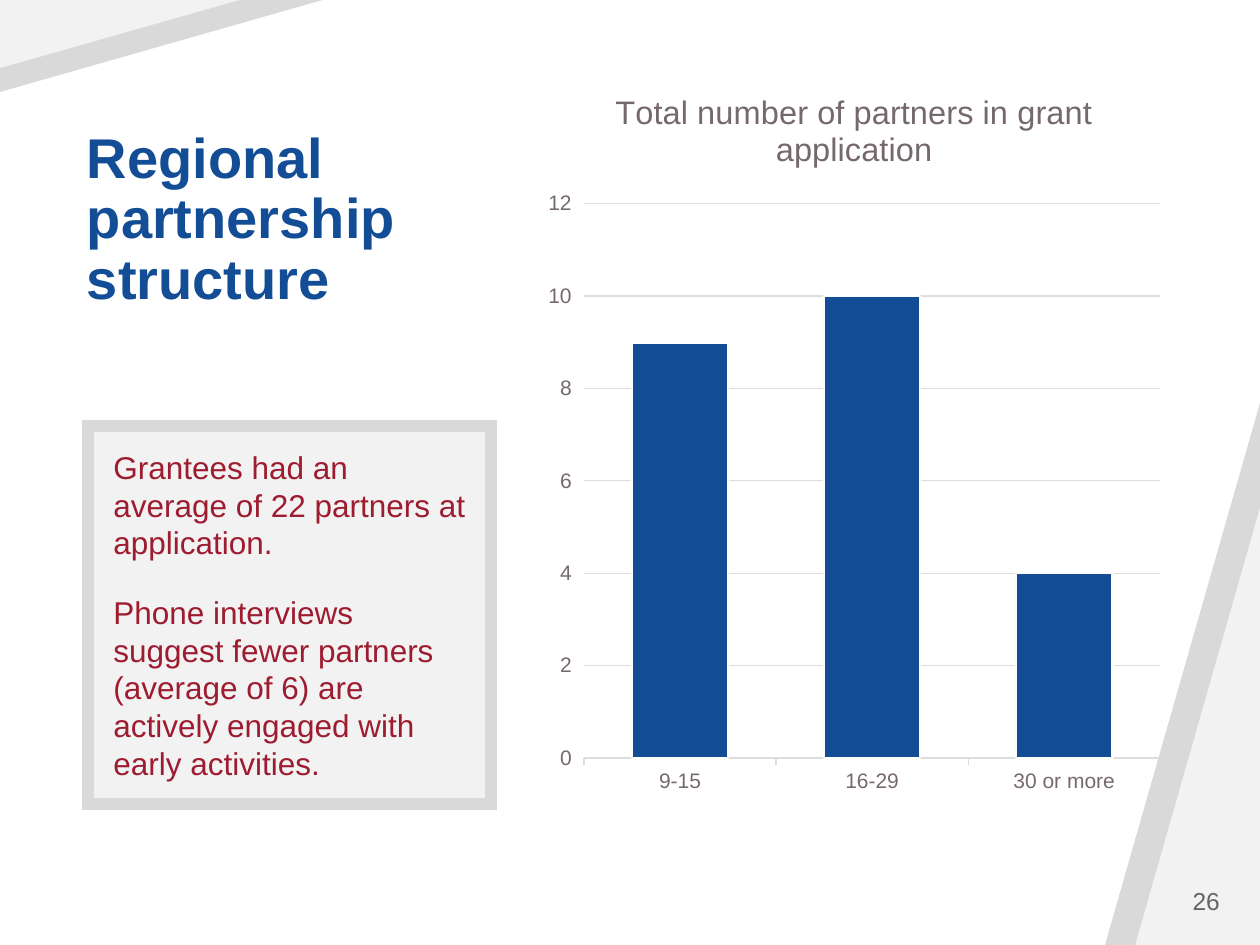
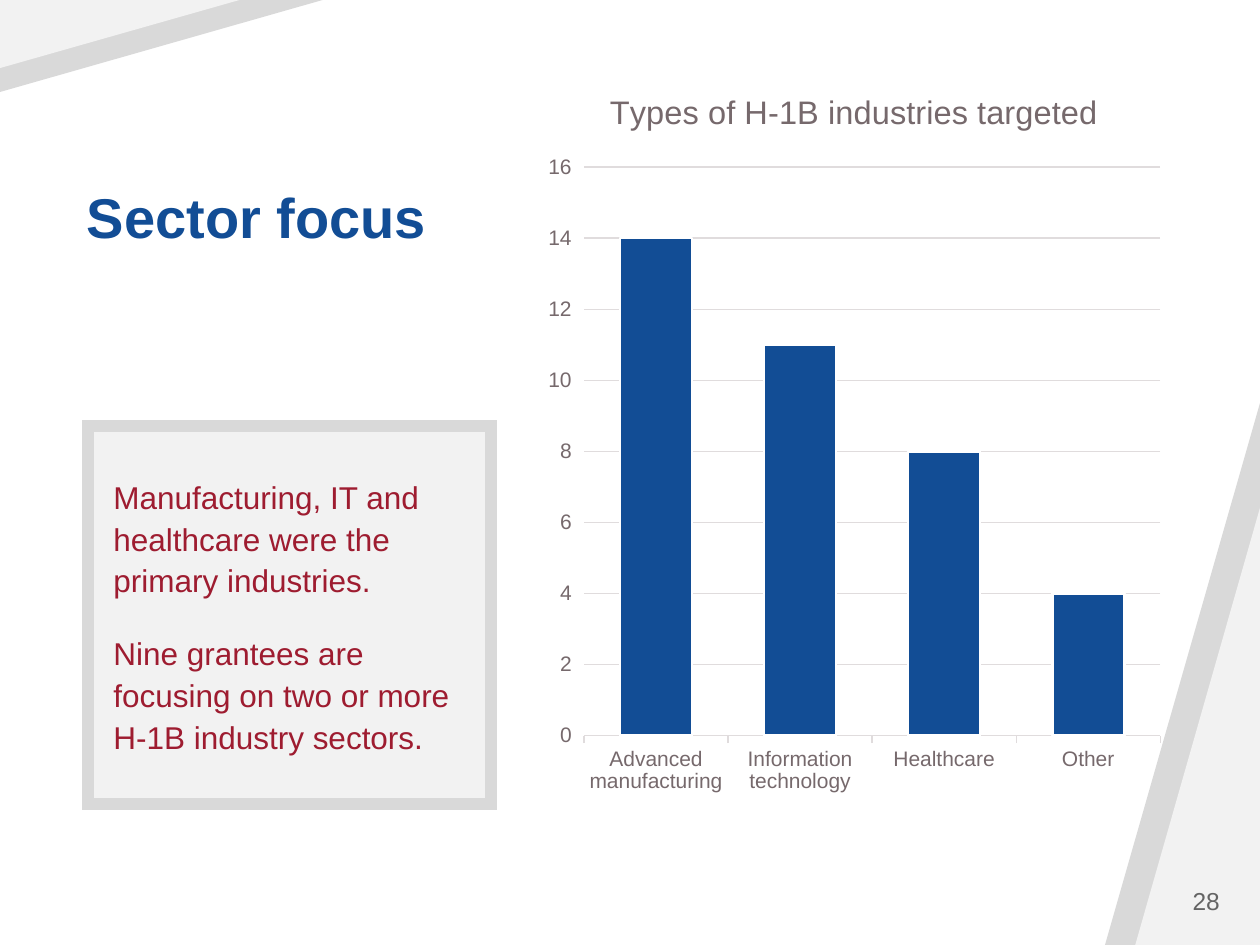
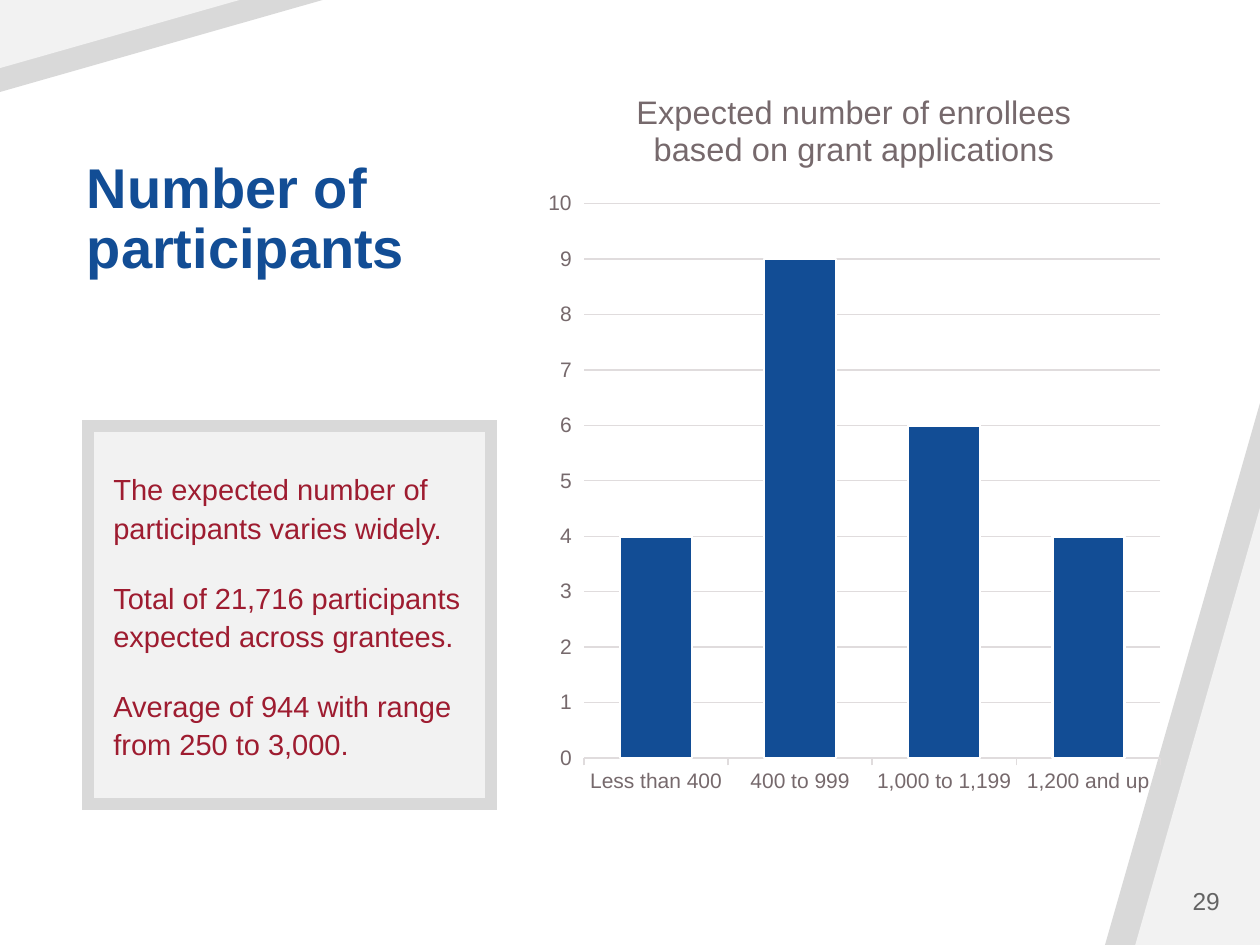
import dataclasses

import lxml.etree
import pptx
import pptx.chart.axis
import pptx.chart.data
import pptx.dml.color
import pptx.enum.chart
import pptx.enum.shapes
import pptx.enum.text
import pptx.oxml.ns
import pptx.shapes.autoshape
import pptx.slide
import pptx.util

WIDTH, HEIGHT = pptx.util.Inches(10), pptx.util.Inches(7.5)
COLUMNS, ROWS = 100, 75
FONT = "Arial"
BLUE, RED, WHITE = "124D95", "9E1C30", "FFFFFF"
BAND_GRAY, PANEL_GRAY = "D9D9D9", "F2F2F2"
CHART_INK, LABEL_INK, GRID_INK, NUMBER_INK = "242021", "76696C", "E0DCDD", "646464"
MIDDLE = pptx.enum.text.MSO_ANCHOR.MIDDLE
LEFT, RIGHT = pptx.enum.text.PP_ALIGN.LEFT, pptx.enum.text.PP_ALIGN.RIGHT


@dataclasses.dataclass(frozen=True)
class Area:
    column: float
    row: float
    columns: float
    rows: float

    def place(self) -> tuple[int, int, int, int]:
        return (
            round(WIDTH * self.column / COLUMNS),
            round(HEIGHT * self.row / ROWS),
            round(WIDTH * self.columns / COLUMNS),
            round(HEIGHT * self.rows / ROWS),
        )


@dataclasses.dataclass(frozen=True)
class Band:
    area: Area
    color: str
    rotation: int = 0


@dataclasses.dataclass(frozen=True)
class Style:
    size: float
    color: str
    bold: bool = False
    align: int = LEFT
    line_spacing: float | None = None
    gap: float = 0
    margins: tuple[float, float] = (0.1, 0.05)


@dataclasses.dataclass(frozen=True)
class Finding:
    number: int
    heading: str
    remarks: tuple[str, ...]
    remark_style: Style
    chart_title: str
    series: str
    counts: dict[str, int]
    top: int
    step: int


BANDS = (
    Band(Area(87.7, 32, 12.3, 43), BAND_GRAY),
    Band(Area(90.1, 40.3, 9.9, 34.7), PANEL_GRAY),
    Band(Area(0, 0, 25.6, 7.3), BAND_GRAY, 180),
    Band(Area(0, 0, 19, 5.4), PANEL_GRAY, 180),
)
HEADING_AREA = Area(6.9, 5, 32.3, 25)
CHART_AREA = Area(42.5, 5, 50.6, 59.1)
PANEL_AREA = Area(7, 33.8, 32, 30)
NUMBER_AREA = Area(89.6, 69.5, 8.2, 4)

HEADING = Style(32, BLUE, bold=True, line_spacing=0.9, margins=(0, 0.05))
NUMBER = Style(14, NUMBER_INK, align=RIGHT)
REMARK = Style(18, RED, gap=18, margins=(0.2, 0.15))
LOOSE_REMARK = dataclasses.replace(REMARK, line_spacing=1.1)
SMALL_REMARK = dataclasses.replace(LOOSE_REMARK, size=16.6)

PARTNERS_TITLE = "Total number of partners in grant application"
FINDINGS = (
    Finding(
        26,
        "Regional partnership structure",
        (
            "Grantees had an average of 22 partners at application.",
            "Phone interviews suggest fewer partners (average of 6) are "
            "actively engaged with early activities.",
        ),
        REMARK,
        PARTNERS_TITLE,
        PARTNERS_TITLE,
        {"9-15": 9, "16-29": 10, "30 or more": 4},
        12,
        2,
    ),
    Finding(
        28,
        "Sector focus",
        (
            "Manufacturing, IT and healthcare were the primary industries.",
            "Nine grantees are focusing on two or more H-1B industry sectors.",
        ),
        LOOSE_REMARK,
        "Types of H-1B industries targeted",
        "Series 1",
        {
            "Advanced manufacturing": 14,
            "Information technology": 11,
            "Healthcare": 8,
            "Other": 4,
        },
        16,
        2,
    ),
    Finding(
        29,
        "Number of participants",
        (
            "The expected number of participants varies widely.",
            "Total of 21,716 participants expected across grantees.",
            "Average of 944 with range from 250 to 3,000.",
        ),
        SMALL_REMARK,
        "Expected number of enrollees based on grant applications",
        "Series 1",
        {"Less than 400": 4, "400 to 999": 9, "1,000 to 1,199": 6, "1,200 and up": 4},
        10,
        1,
    ),
)


def paint(target: pptx.dml.fill.FillFormat, color: str) -> None:
    target.solid()
    target.fore_color.rgb = pptx.dml.color.RGBColor.from_string(color)


def set_font(font: pptx.text.text.Font, size: float, color: str, bold: bool = False) -> None:
    font.name = FONT
    font.size = pptx.util.Pt(size)
    font.bold = bold
    paint(font.fill, color)


def set_line(line: pptx.dml.line.LineFormat, color: str, width: float) -> None:
    paint(line.fill, color)
    line.width = pptx.util.Pt(width)


def write(holder: pptx.shapes.autoshape.Shape, texts: tuple[str, ...], style: Style) -> None:
    frame = holder.text_frame
    frame.word_wrap = True
    frame.vertical_anchor = MIDDLE
    side, end = (pptx.util.Inches(margin) for margin in style.margins)
    frame.margin_left = frame.margin_right = side
    frame.margin_top = frame.margin_bottom = end
    for index, text in enumerate(texts):
        paragraph = frame.add_paragraph() if index else frame.paragraphs[0]
        paragraph.alignment = style.align
        paragraph.line_spacing = style.line_spacing
        if index:
            paragraph.space_before = pptx.util.Pt(style.gap)
        run = paragraph.add_run()
        run.text = text
        set_font(run.font, style.size, style.color, style.bold)


def draw_band(slide: pptx.slide.Slide, band: Band) -> None:
    wedge = slide.shapes.add_shape(
        pptx.enum.shapes.MSO_SHAPE.ISOSCELES_TRIANGLE, *band.area.place()
    )
    wedge.adjustments[0] = 1
    wedge.rotation = band.rotation
    wedge.shadow.inherit = False
    paint(wedge.fill, band.color)
    wedge.line.fill.background()


def draw_text(slide: pptx.slide.Slide, area: Area, text: str, style: Style) -> None:
    write(slide.shapes.add_textbox(*area.place()), (text,), style)


def draw_panel(slide: pptx.slide.Slide, finding: Finding) -> None:
    panel = slide.shapes.add_shape(
        pptx.enum.shapes.MSO_SHAPE.RECTANGLE, *PANEL_AREA.place()
    )
    panel.shadow.inherit = False
    paint(panel.fill, PANEL_GRAY)
    set_line(panel.line, BAND_GRAY, 7)
    border = panel.element.spPr.find(pptx.oxml.ns.qn("a:ln"))
    lxml.etree.SubElement(border, pptx.oxml.ns.qn("a:miter"), lim="800000")
    write(panel, finding.remarks, finding.remark_style)


def draw_chart(slide: pptx.slide.Slide, finding: Finding) -> None:
    data = pptx.chart.data.CategoryChartData()
    data.categories = list(finding.counts)
    data.add_series(finding.series, list(finding.counts.values()))
    chart = slide.shapes.add_chart(
        pptx.enum.chart.XL_CHART_TYPE.COLUMN_CLUSTERED, *CHART_AREA.place(), data
    ).chart
    set_font(chart.font, 10, CHART_INK)
    chart.has_legend = False

    chart.has_title = True
    chart.chart_title.include_in_layout = False
    title = chart.chart_title.text_frame.paragraphs[0].add_run()
    title.text = finding.chart_title
    set_font(title.font, 18.6, LABEL_INK)

    for axis in (chart.category_axis, chart.value_axis):
        axis.major_tick_mark = pptx.enum.chart.XL_TICK_MARK.OUTSIDE
        axis.minor_tick_mark = pptx.enum.chart.XL_TICK_MARK.NONE
        set_font(axis.tick_labels.font, 12, LABEL_INK)
    set_line(chart.category_axis.format.line, GRID_INK, 0.75)
    counts = chart.value_axis
    counts.format.line.fill.background()
    counts.has_major_gridlines = True
    set_line(counts.major_gridlines.format.line, GRID_INK, 0.75)
    counts.minimum_scale = 0
    counts.maximum_scale = finding.top
    counts.major_unit = finding.step

    plot = chart.plots[0]
    plot.gap_width = 100
    plot.vary_by_categories = False
    bars = plot.series[0].format
    paint(bars.fill, BLUE)
    set_line(bars.line, WHITE, 1.5)


def main() -> None:
    deck = pptx.Presentation()
    deck.slide_width, deck.slide_height = WIDTH, HEIGHT
    for finding in FINDINGS:
        slide = deck.slides.add_slide(deck.slide_layouts[6])
        paint(slide.background.fill, WHITE)
        for band in BANDS:
            draw_band(slide, band)
        draw_text(slide, HEADING_AREA, finding.heading, HEADING)
        draw_chart(slide, finding)
        draw_panel(slide, finding)
        draw_text(slide, NUMBER_AREA, str(finding.number), NUMBER)
    deck.save("out.pptx")


if __name__ == "__main__":
    main()
